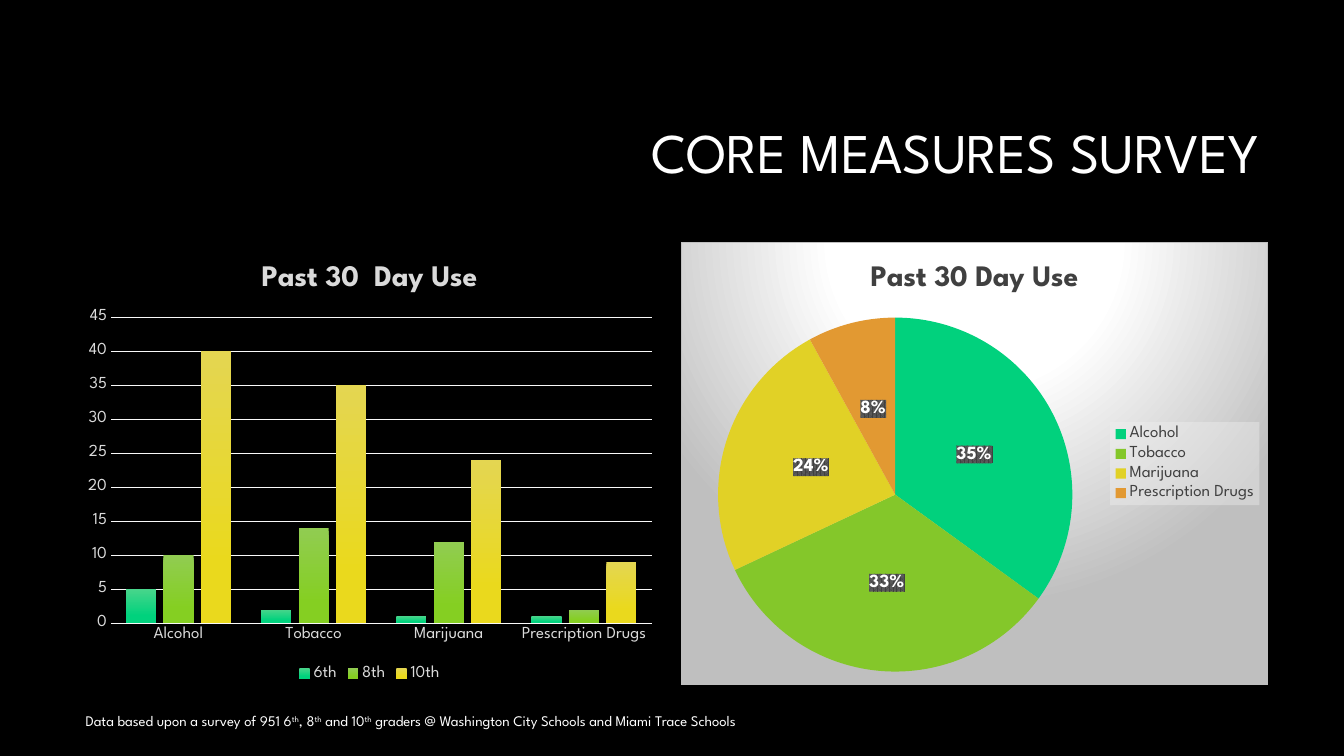
from pptx import Presentation
from pptx.chart.data import CategoryChartData
from pptx.dml.color import RGBColor
from pptx.enum.chart import XL_CHART_TYPE, XL_LABEL_POSITION, XL_LEGEND_POSITION, XL_TICK_MARK
from pptx.enum.text import MSO_ANCHOR, PP_ALIGN
from pptx.oxml import parse_xml
from pptx.oxml.ns import nsdecls, qn
from pptx.util import Inches, Pt

COLUMN = XL_CHART_TYPE.COLUMN_CLUSTERED
PIE = XL_CHART_TYPE.PIE
BOTTOM = XL_LEGEND_POSITION.BOTTOM
RIGHT = XL_LEGEND_POSITION.RIGHT
CENTER = XL_LABEL_POSITION.CENTER
NO_TICK = XL_TICK_MARK.NONE
MIDDLE = MSO_ANCHOR.MIDDLE
ALIGN_LEFT = PP_ALIGN.LEFT
ALIGN_RIGHT = PP_ALIGN.RIGHT

BLACK = RGBColor(0x00, 0x00, 0x00)
WHITE = RGBColor(0xFF, 0xFF, 0xFF)
LIGHT = RGBColor(0xDA, 0xDA, 0xDA)
GRID = RGBColor(0xF9, 0xF9, 0xF9)
DARK = RGBColor(0x40, 0x40, 0x40)
GRAY = RGBColor(0x59, 0x59, 0x59)
SILVER = RGBColor(0xBF, 0xBF, 0xBF)
PALE = RGBColor(0xF2, 0xF2, 0xF2)
BAR_COLORS = [
    (RGBColor(0x48, 0xD5, 0x8B), RGBColor(0x00, 0xD2, 0x7D)),
    (RGBColor(0x91, 0xCC, 0x51), RGBColor(0x85, 0xCF, 0x22)),
    (RGBColor(0xE4, 0xD6, 0x51), RGBColor(0xEA, 0xD9, 0x1D)),
]
PIE_COLORS = [
    RGBColor(0x01, 0xD1, 0x7D), RGBColor(0x84, 0xC7, 0x2A),
    RGBColor(0xE1, 0xD1, 0x26), RGBColor(0xE2, 0x99, 0x32),
]

DRUGS = ["Alcohol", "Tobacco", "Marijuana", "Prescription Drugs"]
GRADES = {"6th": (5, 2, 1, 1), "8th": (10, 14, 12, 2), "10th": (40, 35, 24, 9)}
SHARES = {"Series 1": (35, 33, 24, 8)}


def clr(color, inner=""):
    return f'<a:srgbClr val="{color}">{inner}</a:srgbClr>'


def gradient(stops, direction):
    gs = "".join(f'<a:gs pos="{pos * 1000}">{clr(c)}</a:gs>' for pos, c in stops)
    return f'<a:gradFill rotWithShape="1"><a:gsLst>{gs}</a:gsLst>{direction}</a:gradFill>'


def sp_pr(fill, line="<a:ln><a:noFill/></a:ln>"):
    return parse_xml(f'<c:spPr {nsdecls("c", "a")}>{fill}{line}</c:spPr>')


def style_before_text(element, props):
    element.find(qn("c:txPr")).addprevious(props)


class Deck:
    font = "League Spartan"

    def __init__(self):
        self.prs = Presentation()
        self.prs.slide_width = Inches(13.33)
        self.prs.slide_height = Inches(7.5)
        self.slide = self.prs.slides.add_slide(self.prs.slide_layouts[6])
        fill = self.slide.background.fill
        fill.solid()
        fill.fore_color.rgb = BLACK

    def style(self, font, size, color, bold=False):
        font.name = self.font
        font.size = Pt(size)
        font.color.rgb = color
        font.bold = bold

    def text(self, box, runs, size, align=ALIGN_LEFT, spacing=1.0):
        sp = self.slide.shapes.add_textbox(*map(Inches, box))
        tf = sp.text_frame
        tf.word_wrap = True
        tf.vertical_anchor = MIDDLE
        p = tf.paragraphs[0]
        p.alignment = align
        p.line_spacing = spacing
        for text, raised in runs:
            r = p.add_run()
            r.text = text
            self.style(r.font, size, WHITE)
            if raised:
                r.font._element.set("baseline", "30000")

    def chart(self, kind, left, title, series, color, legend, plot_box):
        data = CategoryChartData()
        data.categories = DRUGS
        for name, values in series.items():
            data.add_series(name, values)
        frame = self.slide.shapes.add_chart(
            kind, Inches(left), Inches(2.4), Inches(5.83), Inches(4.4), data)
        chart = frame.chart
        self.style(chart.font, 10, WHITE)
        chart.has_title = True
        r = chart.chart_title.text_frame.paragraphs[0].add_run()
        r.text = title
        self.style(r.font, 21.3, color, True)
        chart.has_legend = True
        chart.legend.position = legend
        chart.legend.include_in_layout = False
        self.style(chart.legend.font, 12, color)
        self.place_plot(chart, plot_box)
        return chart

    def place_plot(self, chart, box):
        area = chart._chartSpace.chart.plotArea
        for old in area.findall(qn("c:layout")):
            area.remove(old)
        sizes = "".join(f'<c:{k} val="{v}"/>' for k, v in zip("xywh", box))
        area.insert(0, parse_xml(
            f'<c:layout {nsdecls("c")}><c:manualLayout><c:layoutTarget val="inner"/>'
            f'<c:xMode val="edge"/><c:yMode val="edge"/>{sizes}'
            '</c:manualLayout></c:layout>'))

    def columns(self, left, title):
        chart = self.chart(COLUMN, left, title, GRADES, LIGHT, BOTTOM,
                           (0.06, 0.17, 0.92, 0.69))
        plot = chart.plots[0]
        plot.gap_width = 100
        plot.overlap = -24
        plot.vary_by_categories = False
        for s, (top, base) in zip(plot.series, BAR_COLORS):
            fill = gradient([(0, top), (78, base)], '<a:lin ang="5400000" scaled="0"/>')
            props = s._element.get_or_add_spPr()
            props.getparent().replace(props, sp_pr(fill))
        for axis in (chart.category_axis, chart.value_axis):
            axis.major_tick_mark = NO_TICK
            axis.minor_tick_mark = NO_TICK
            self.style(axis.tick_labels.font, 12, LIGHT)
        values = chart.value_axis
        values.minimum_scale = 0
        values.maximum_scale = 45
        values.major_unit = 5
        values.format.line.fill.background()
        values.has_major_gridlines = True
        for line in (chart.category_axis.format.line, values.major_gridlines.format.line):
            line.color.rgb = GRID
            line.width = Pt(0.75)

    def pie(self, left, title):
        chart = self.chart(PIE, left, title, SHARES, DARK, RIGHT,
                           (0.06, 0.17, 0.61, 0.8))
        plot = chart.plots[0]
        plot.vary_by_categories = True
        for i, color in enumerate(PIE_COLORS):
            fmt = plot.series[0].points[i].format
            fmt.fill.solid()
            fmt.fill.fore_color.rgb = color
            fmt.line.fill.background()
        labels = plot.series[0].data_labels
        labels.show_percentage = True
        labels.show_value = False
        labels.number_format = "0%"
        labels.number_format_is_linked = False
        labels.position = CENTER
        self.style(labels.font, 13.3, WHITE, True)
        pattern = (f'<a:pattFill prst="pct75"><a:fgClr>{clr(DARK)}</a:fgClr>'
                   f'<a:bgClr>{clr(GRAY)}</a:bgClr></a:pattFill>')
        style_before_text(labels._element, sp_pr(pattern))
        veil = clr(PALE, '<a:alpha val="39000"/>')
        style_before_text(chart.legend._element, sp_pr(f"<a:solidFill>{veil}</a:solidFill>"))
        glow = gradient(
            [(0, WHITE), (39, WHITE), (100, SILVER)],
            '<a:path path="circle"><a:fillToRect l="50000" t="-80000" r="50000" b="180000"/></a:path>')
        border = f'<a:ln w="9525"><a:solidFill>{clr(SILVER)}</a:solidFill></a:ln>'
        style_before_text(chart._chartSpace, sp_pr(glow, border))


def main():
    deck = Deck()
    deck.text((3.17, 0.84, 9.42, 1.41), [("CORE MEASURES SURVEY", False)], 40, ALIGN_RIGHT, 0.9)
    deck.columns(0.75, "Past 30  Day Use")
    deck.pie(6.75, "Past 30 Day Use")
    deck.text((0.75, 6.95, 8.5, 0.4), [
        ("Data based upon a survey of 951 6", False), ("th", True),
        (", 8", False), ("th", True),
        (" and 10", False), ("th", True),
        (" graders @ Washington City Schools and Miami Trace Schools", False),
    ], 10.5)
    deck.prs.save("out.pptx")


if __name__ == "__main__":
    main()
